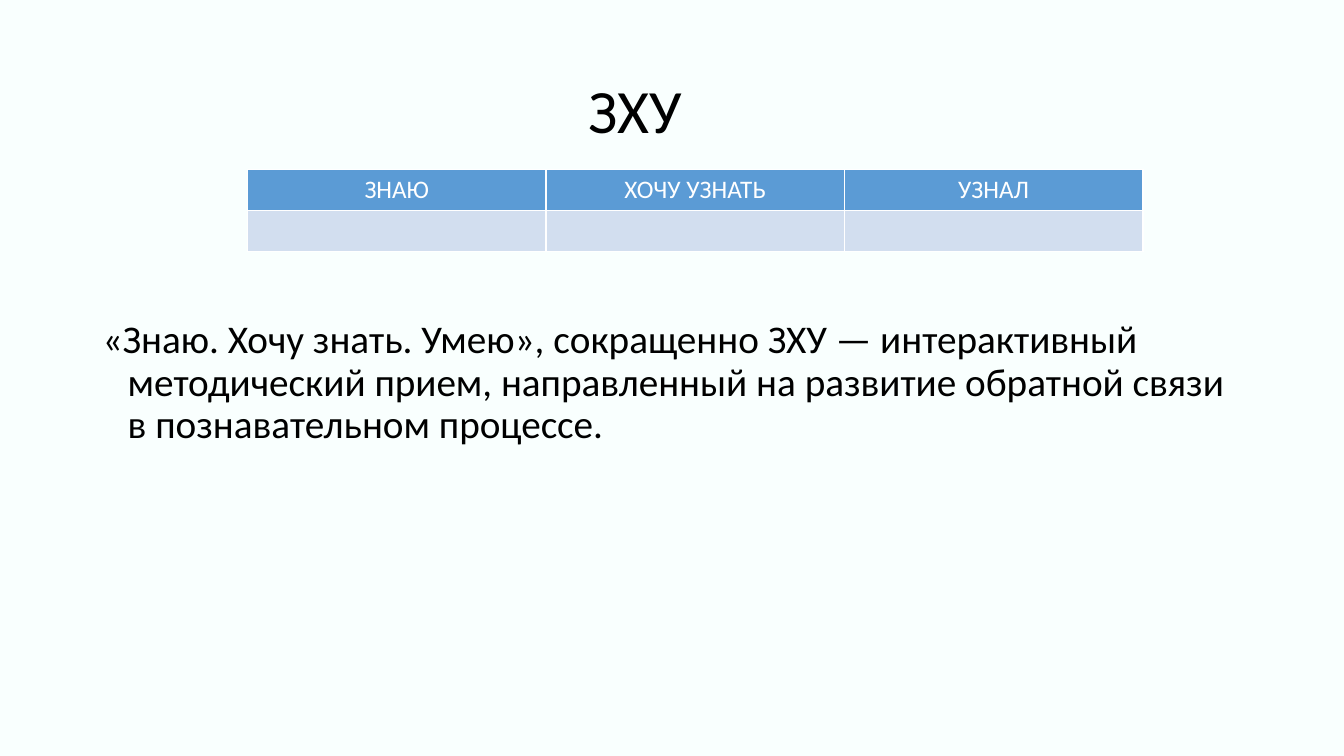
from lxml import etree
from pptx import Presentation
from pptx.dml.color import RGBColor
from pptx.enum.text import MSO_ANCHOR, PP_ALIGN
from pptx.oxml.ns import qn
from pptx.util import Pt

CENTER, LEFT = PP_ALIGN.CENTER, PP_ALIGN.LEFT
MIDDLE, TOP = MSO_ANCHOR.MIDDLE, MSO_ANCHOR.TOP

FONT = "Calibri"
BACKGROUND, BLACK, WHITE = "F9FFFE", "000000", "FFFFFF"
TITLE = "ЗХУ"
BODY = (
    "«Знаю. Хочу знать. Умею», сокращенно ЗХУ — интерактивный методический прием, "
    "направленный на развитие обратной связи в познавательном процессе."
)
ROWS = [("ЗНАЮ", "ХОЧУ УЗНАТЬ", "УЗНАЛ"), ("", "", "")]
ROW_FILLS = ["5B9BD5", "D2DEEF"]
TABLE_LEFT, TABLE_TOP = 176.8, 121.2
COLUMN_WIDTH, ROW_HEIGHT = 213.2, 29.2


def color(value):
    return RGBColor.from_string(value)


def style(para, size, ink, align):
    para.font.name = FONT
    para.font.size = Pt(size)
    para.font.color.rgb = color(ink)
    para.alignment = align


def add_text(page, text, bounds, size, align, anchor):
    box = page.shapes.add_textbox(*map(Pt, bounds))
    frame = box.text_frame
    frame.word_wrap = True
    frame.vertical_anchor = anchor
    para = frame.paragraphs[0]
    para.text = text
    para.line_spacing = 0.9
    style(para, size, BLACK, align)
    return para


def add_borders(cell):
    properties = cell._tc.get_or_add_tcPr()
    for position, side in enumerate(("lnL", "lnR", "lnT", "lnB")):
        line = etree.Element(qn("a:" + side), w=str(Pt(1)))
        fill = etree.SubElement(line, qn("a:solidFill"))
        etree.SubElement(fill, qn("a:srgbClr"), val=WHITE)
        properties.insert(position, line)


def add_chart_of_knowledge(page):
    columns = len(ROWS[0])
    table = page.shapes.add_table(
        len(ROWS), columns, Pt(TABLE_LEFT), Pt(TABLE_TOP),
        Pt(COLUMN_WIDTH * columns), Pt(ROW_HEIGHT * len(ROWS)),
    ).table
    table.first_row = False
    table.horz_banding = False
    for column in table.columns:
        column.width = Pt(COLUMN_WIDTH)
    for row, (texts, fill) in enumerate(zip(ROWS, ROW_FILLS)):
        for column, text in enumerate(texts):
            cell = table.cell(row, column)
            cell.text = text
            cell.fill.solid()
            cell.fill.fore_color.rgb = color(fill)
            style(cell.text_frame.paragraphs[0], 18, WHITE, CENTER)
            add_borders(cell)


def main():
    deck = Presentation()
    deck.slide_width, deck.slide_height = Pt(960), Pt(540)
    page = deck.slides.add_slide(deck.slide_layouts[6])
    page.background.fill.solid()
    page.background.fill.fore_color.rgb = color(BACKGROUND)

    add_text(page, TITLE, (354, 28.8, 200, 104.4), 44, CENTER, MIDDLE)
    body = add_text(page, BODY, (66.2, 225, 828, 261), 28, LEFT, TOP)
    indents = body._p.get_or_add_pPr()
    indents.set("marL", str(Pt(18)))
    indents.set("indent", str(Pt(-18)))
    add_chart_of_knowledge(page)
    deck.save("out.pptx")


if __name__ == "__main__":
    main()
